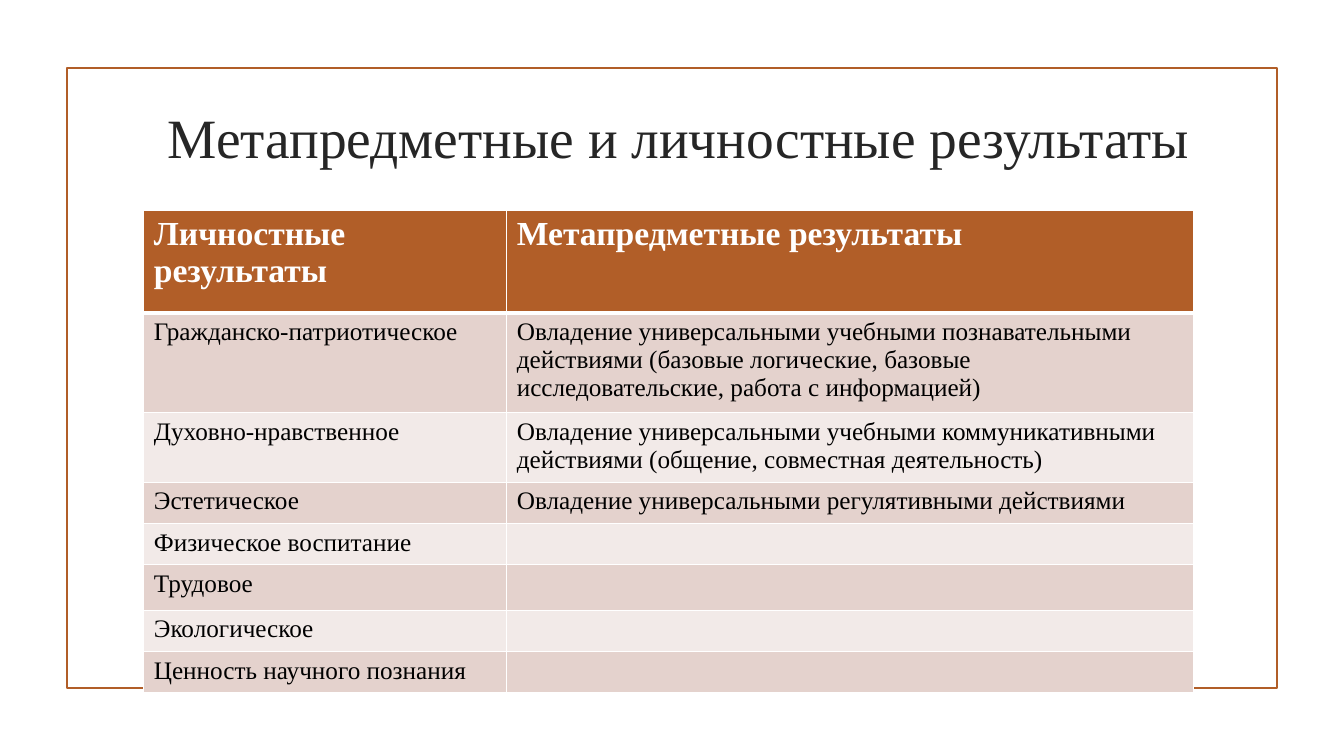
from pptx import Presentation
from pptx.dml.color import RGBColor as Rgb
from pptx.enum.shapes import MSO_SHAPE as Shape
from pptx.enum.text import MSO_ANCHOR as Anchor, MSO_AUTO_SIZE as Fit, PP_ALIGN as Align
from pptx.oxml import parse_xml as to_xml
from pptx.oxml.ns import nsdecls
from pptx.util import Inches, Pt

WIDE, HIGH = 13.33, 7.5
RUST, WHITE, BLACK, GREY = "B15E28", "FFFFFF", "000000", "262626"
BANDS = "E4D2CD", "F2EAE8"
COLS = 3.6, 6.81
ROWS = 1.02, 0.99, 0.69, 0.41, 0.41, 0.45, 0.41, 0.41
GOALS = [
    ("Личностные результаты", "Метапредметные результаты"),
    ("Гражданско-патриотическое",
     "Овладение универсальными учебными познавательными действиями "
     "(базовые логические, базовые исследовательские, работа с информацией)"),
    ("Духовно-нравственное",
     "Овладение универсальными учебными коммуникативными действиями "
     "(общение, совместная деятельность)"),
    ("Эстетическое", "Овладение универсальными регулятивными действиями"),
    ("Физическое воспитание", ""),
    ("Трудовое", ""),
    ("Экологическое", ""),
    ("Ценность научного познания", ""),
]


def paint(hue):
    return Rgb.from_string(hue)


class Deck:
    """Holds the font and the current slide, and draws on it in shares of its size."""

    def __init__(self, face):
        self.face = face
        self.show = Presentation()
        self.show.slide_width, self.show.slide_height = Inches(WIDE), Inches(HIGH)
        self.slide = self.show.slides.add_slide(self.show.slide_layouts[5])

    def area(self, left, top, wide, high):
        w, h = self.show.slide_width, self.show.slide_height
        return int(left * w), int(top * h), int(wide * w), int(high * h)

    def style(self, para, size, hue, bold=False):
        font = para.font
        font.name, font.size, font.bold = self.face, Pt(size), bold
        font.color.rgb = paint(hue)

    def frame(self, box, hue):
        rect = self.slide.shapes.add_shape(Shape.RECTANGLE, *self.area(*box))
        rect.shadow.inherit = False
        rect.fill.background()
        rect.line.color.rgb, rect.line.width = paint(hue), Pt(1.25)

    def title(self, text, box):
        head = self.slide.shapes.title
        head.left, head.top, head.width, head.height = self.area(*box)
        frame = head.text_frame
        frame.text = text
        frame.auto_size, frame.vertical_anchor = Fit.NONE, Anchor.MIDDLE
        frame.margin_left = frame.margin_right = 0
        para = frame.paragraphs[0]
        para.alignment = Align.CENTER
        self.style(para, 39.6, GREY)

    def edge(self, cell, widths):
        props = cell._tc.get_or_add_tcPr()
        for spot, (side, width) in enumerate(zip("LRTB", widths)):
            props.insert(spot, to_xml(
                f'<a:ln{side} {nsdecls("a")} w="{Pt(width)}"><a:solidFill>'
                f'<a:srgbClr val="{WHITE}"/></a:solidFill></a:ln{side}>'))

    def table(self, data, box, cols, rows):
        grid = self.slide.shapes.add_table(len(rows), len(cols), *self.area(*box)).table
        for col, wide in zip(grid.columns, cols):
            col.width = Inches(wide)
        for r, (high, texts) in enumerate(zip(rows, data)):
            grid.rows[r].height = Inches(high)
            top = r == 0
            for c, text in enumerate(texts):
                cell = grid.cell(r, c)
                cell.text = text
                cell.fill.solid()
                cell.fill.fore_color.rgb = paint(RUST if top else BANDS[(r - 1) % 2])
                self.edge(cell, (1, 1, 3 if r == 1 else 1, 3 if top else 1))
                self.style(cell.text_frame.paragraphs[0], 24 if top else 18,
                           WHITE if top else BLACK, top)


def main():
    deck = Deck("Times New Roman")
    deck.frame((0.05, 0.09, 0.9, 0.82), RUST)
    deck.title("Метапредметные и личностные результаты", (0.12, 0.1, 0.77, 0.16))
    deck.table(GOALS, (0.107, 0.278, 0.78, 0.64), COLS, ROWS)
    deck.show.save("out.pptx")


if __name__ == "__main__":
    main()
